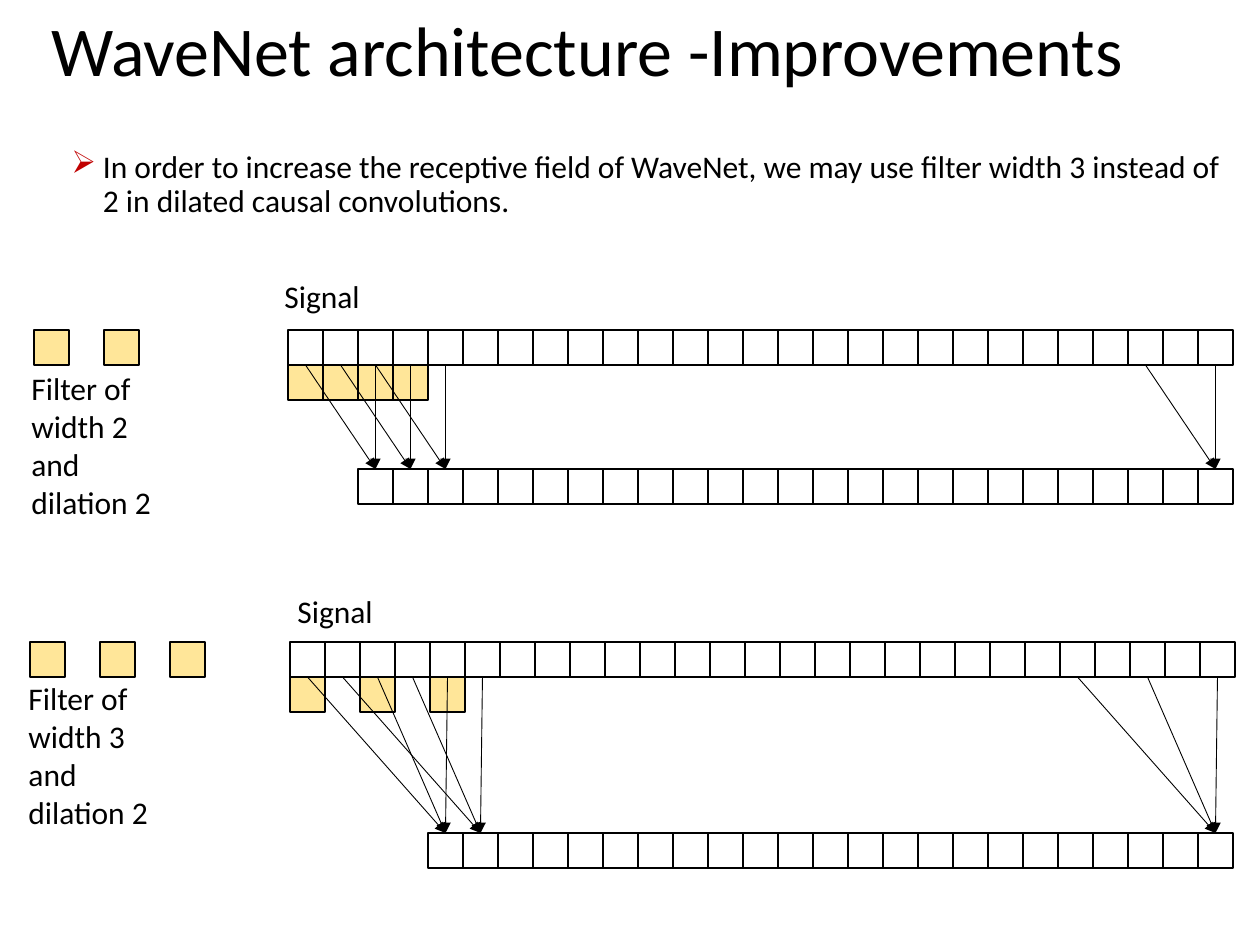
from lxml.etree import SubElement
from pptx import Presentation
from pptx.dml.color import RGBColor
from pptx.enum.shapes import MSO_CONNECTOR as CONNECTOR, MSO_SHAPE as SHAPE
from pptx.enum.text import MSO_ANCHOR as ANCHOR
from pptx.oxml.ns import qn
from pptx.util import Pt

# Content
TITLE = "WaveNet architecture -Improvements"
POINT = ("In order to increase the receptive field of WaveNet, we may use filter "
         "width 3 instead of 2 in dilated causal convolutions.")
FONT = "Calibri"
COLORS = {"ink": "000000", "filter": "FFE699", "bullet": "C00000"}
SAMPLES, DILATION = 27, 2

# "placed" lists the signal cells that have a filter cell below them,
# "outputs" the output cells whose inputs are drawn as arrows
PANELS = [
    {"width": 2, "placed": [0, 1, 2, 3], "outputs": [0, 1, 2, 24],
     "signal": (288, 330), "output_top": 469, "key_left": 34,
     "signal_label": (272, 271, 135, 50), "filter_label": (19, 363, 159, 165)},
    {"width": 3, "placed": [0, 2, 4], "outputs": [0, 1, 22],
     "signal": (290, 642), "output_top": 833, "key_left": 30,
     "signal_label": (285, 586, 135, 50), "filter_label": (16, 673, 160, 165)},
]

# Layout in px
SCALE = 914400 / 126
SLIDE = (1260, 945)
CELL = 35
OUTPUT_LEFT = 288


def emu(*lengths):
    return [round(length * SCALE) for length in lengths]


def color(name):
    return RGBColor.from_string(COLORS[name])


prs = Presentation()
prs.slide_width, prs.slide_height = emu(*SLIDE)
slide = prs.slides.add_slide(prs.slide_layouts[6])


def add_text(text, box, size=18, anchor=ANCHOR.TOP):
    frame = slide.shapes.add_textbox(*emu(*box)).text_frame
    frame.word_wrap = True
    frame.vertical_anchor = anchor
    frame.text = text
    paragraph = frame.paragraphs[0]
    font = paragraph.runs[0].font
    font.name, font.size = FONT, Pt(size)
    font.color.rgb = color("ink")
    return paragraph


def add_cell(left, top, fill=None):
    cell = slide.shapes.add_shape(SHAPE.RECTANGLE, *emu(left, top, CELL, CELL))
    cell.shadow.inherit = False
    if fill:
        cell.fill.solid()
        cell.fill.fore_color.rgb = color(fill)
    else:
        cell.fill.background()
    cell.line.color.rgb = color("ink")
    cell.line.width = Pt(1)


def add_arrow(start, end):
    arrow = slide.shapes.add_connector(CONNECTOR.STRAIGHT, *emu(*start, *end))
    arrow.line.color.rgb = color("ink")
    arrow.line.width = Pt(0.5)
    SubElement(arrow.line._get_or_add_ln(), qn("a:tailEnd"), type="triangle")
    SubElement(arrow._element.spPr, qn("a:effectLst"))


# Title and bulleted point
title = add_text(TITLE, (39, 6, 1184, 96), 40, ANCHOR.MIDDLE)
title.line_spacing = 0.9

point = add_text(POINT, (59, 145, 1188, 134))
point.line_spacing = 0.9
point.space_before = Pt(10)
props = point._p.get_or_add_pPr()
indent = Pt(18)
props.set("marL", str(indent))
props.set("indent", str(-indent))
bullet_color = SubElement(props, qn("a:buClr"))
SubElement(bullet_color, qn("a:srgbClr"), val=COLORS["bullet"])
SubElement(props, qn("a:buChar"), char="➢")

# One panel per filter width
for panel in PANELS:
    signal_left, signal_top = panel["signal"]
    signal_bottom = signal_top + CELL
    output_top = panel["output_top"]
    taps = [DILATION * i for i in range(panel["width"])]
    first_output = taps[-1] if panel["width"] > 2 else DILATION

    # Filter cells under the signal, then the signal and output rows
    for i in panel["placed"]:
        add_cell(signal_left + i * CELL, signal_bottom, "filter")
    for i in range(SAMPLES):
        add_cell(signal_left + i * CELL, signal_top)
    for i in range(first_output, SAMPLES):
        add_cell(OUTPUT_LEFT + i * CELL, output_top)

    # Arrows from each tapped input to its output
    for output in panel["outputs"]:
        end = (OUTPUT_LEFT + (first_output + output + 0.5) * CELL, output_top)
        for tap in taps:
            add_arrow((signal_left + (output + tap + 0.5) * CELL, signal_bottom), end)

    # Filter key and labels
    for tap in taps:
        add_cell(panel["key_left"] + tap * CELL, signal_top, "filter")
    add_text("Signal", panel["signal_label"])
    add_text(f"Filter of width {panel['width']} and dilation {DILATION}",
             panel["filter_label"])

prs.save("out.pptx")
